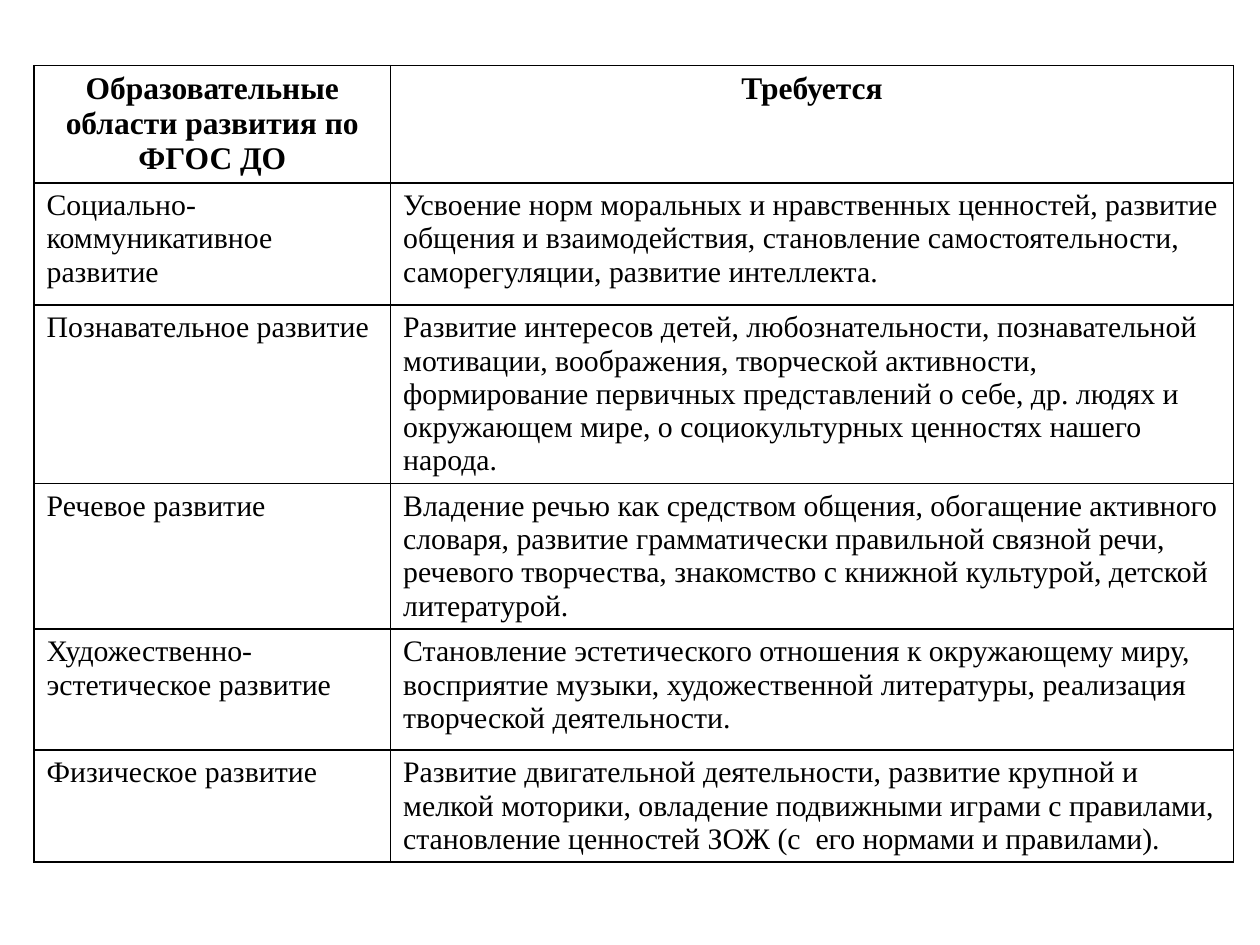
"""Build a slide with a table of educational areas and their requirements."""
import pptx
import pptx.dml.color
import pptx.enum.text
import pptx.oxml
import pptx.oxml.ns
import pptx.util
from pptx.util import Inches

BLACK = pptx.dml.color.RGBColor(0x00, 0x00, 0x00)
FONT = "Times New Roman"
LEFT = pptx.enum.text.PP_ALIGN.LEFT
CENTER = pptx.enum.text.PP_ALIGN.CENTER

areas = [
    ("Образовательные области развития по ФГОС ДО", "Требуется"),
    ("Социально-коммуникативное развитие",
     "Усвоение норм моральных и нравственных ценностей, развитие общения и "
     "взаимодействия, становление самостоятельности, саморегуляции, развитие интеллекта."),
    ("Познавательное развитие",
     "Развитие интересов детей, любознательности, познавательной мотивации, воображения, "
     "творческой активности, формирование первичных представлений о себе, др. людях и "
     "окружающем мире, о социокультурных ценностях нашего народа."),
    ("Речевое развитие",
     "Владение речью как средством общения, обогащение активного словаря, развитие "
     "грамматически правильной связной речи, речевого творчества, знакомство с книжной "
     "культурой, детской литературой."),
    ("Художественно-эстетическое развитие",
     "Становление эстетического отношения к окружающему миру, восприятие музыки, "
     "художественной литературы, реализация творческой деятельности."),
    ("Физическое развитие",
     "Развитие двигательной деятельности, развитие крупной и мелкой моторики, овладение "
     "подвижными играми с правилами, становление ценностей ЗОЖ (с  его нормами и правилами)."),
]
column_widths = [2.83, 6.69]
row_heights = [0.79, 0.97, 1.18, 0.96, 0.96, 0.56]


def write_text(cell, text, size=17, bold=False, align=LEFT):
    paragraph = cell.text_frame.paragraphs[0]
    paragraph.alignment = align
    run = paragraph.add_run()
    run.text = text
    run.font.name = FONT
    run.font.size = pptx.util.Pt(size)
    run.font.bold = bold
    run.font.color.rgb = BLACK


def add_borders(cell):
    properties = cell._tc.get_or_add_tcPr()
    for position, side in enumerate(("lnL", "lnR", "lnT", "lnB")):
        border = pptx.oxml.parse_xml(
            f'<a:{side} {pptx.oxml.ns.nsdecls("a")} w="{pptx.util.Pt(1)}">'
            f'<a:solidFill><a:srgbClr val="{BLACK}"/></a:solidFill></a:{side}>')
        properties.insert(position, border)


presentation = pptx.Presentation()
presentation.slide_width = Inches(10)
presentation.slide_height = Inches(7.5)
slide = presentation.slides.add_slide(presentation.slide_layouts[6])

requirements = slide.shapes.add_table(
    len(areas), len(column_widths), Inches(0.27), Inches(0.52),
    Inches(sum(column_widths)), Inches(sum(row_heights))).table
requirements.first_row = False
requirements.horz_banding = False

for column, width in zip(requirements.columns, column_widths):
    column.width = Inches(width)
for row, height in zip(requirements.rows, row_heights):
    row.height = Inches(height)

for row_index, area in enumerate(areas):
    heading = {"size": 18, "bold": True, "align": CENTER} if row_index == 0 else {}
    for column_index, text in enumerate(area):
        cell = requirements.cell(row_index, column_index)
        cell.fill.background()
        add_borders(cell)
        write_text(cell, text, **heading)

presentation.save("out.pptx")
